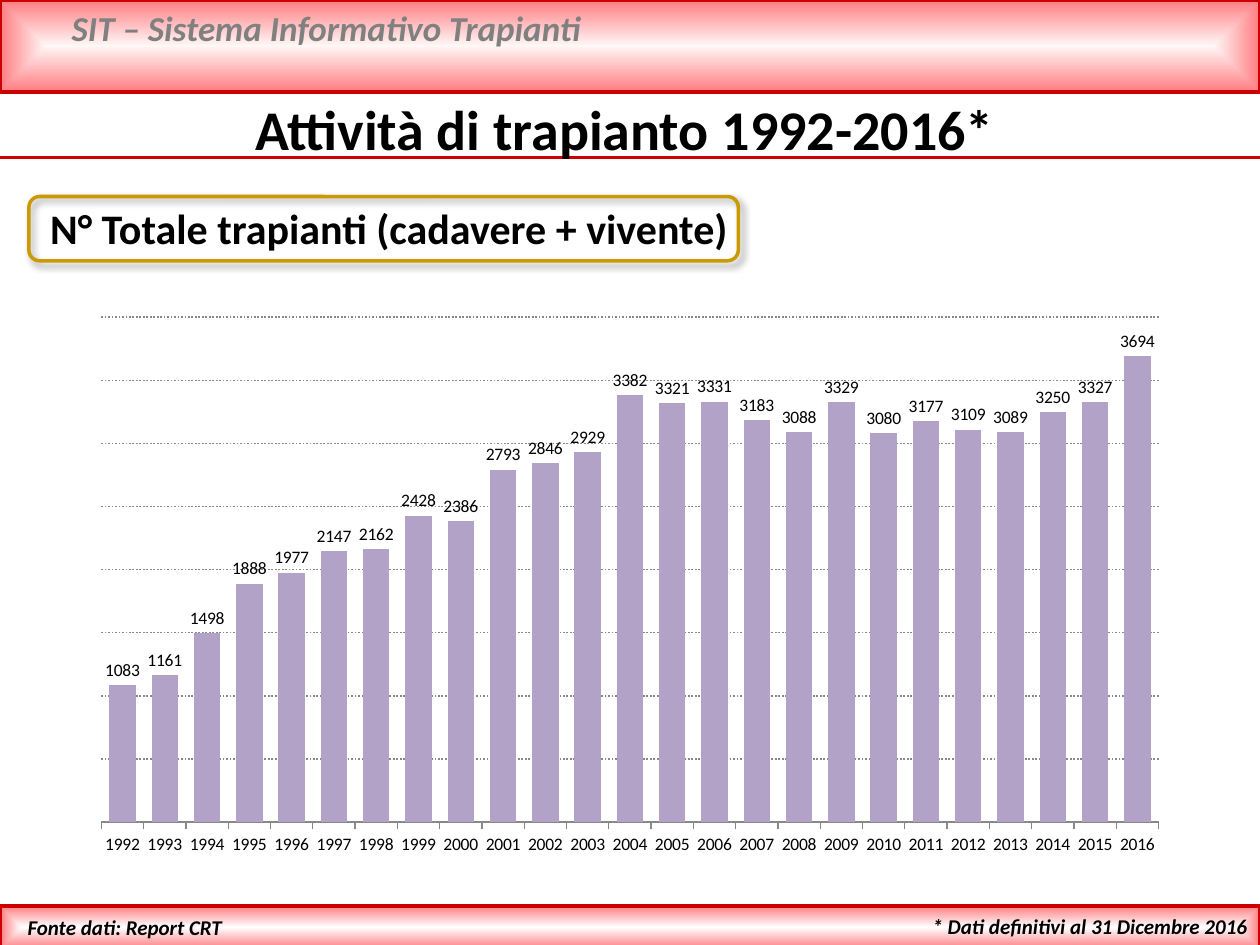
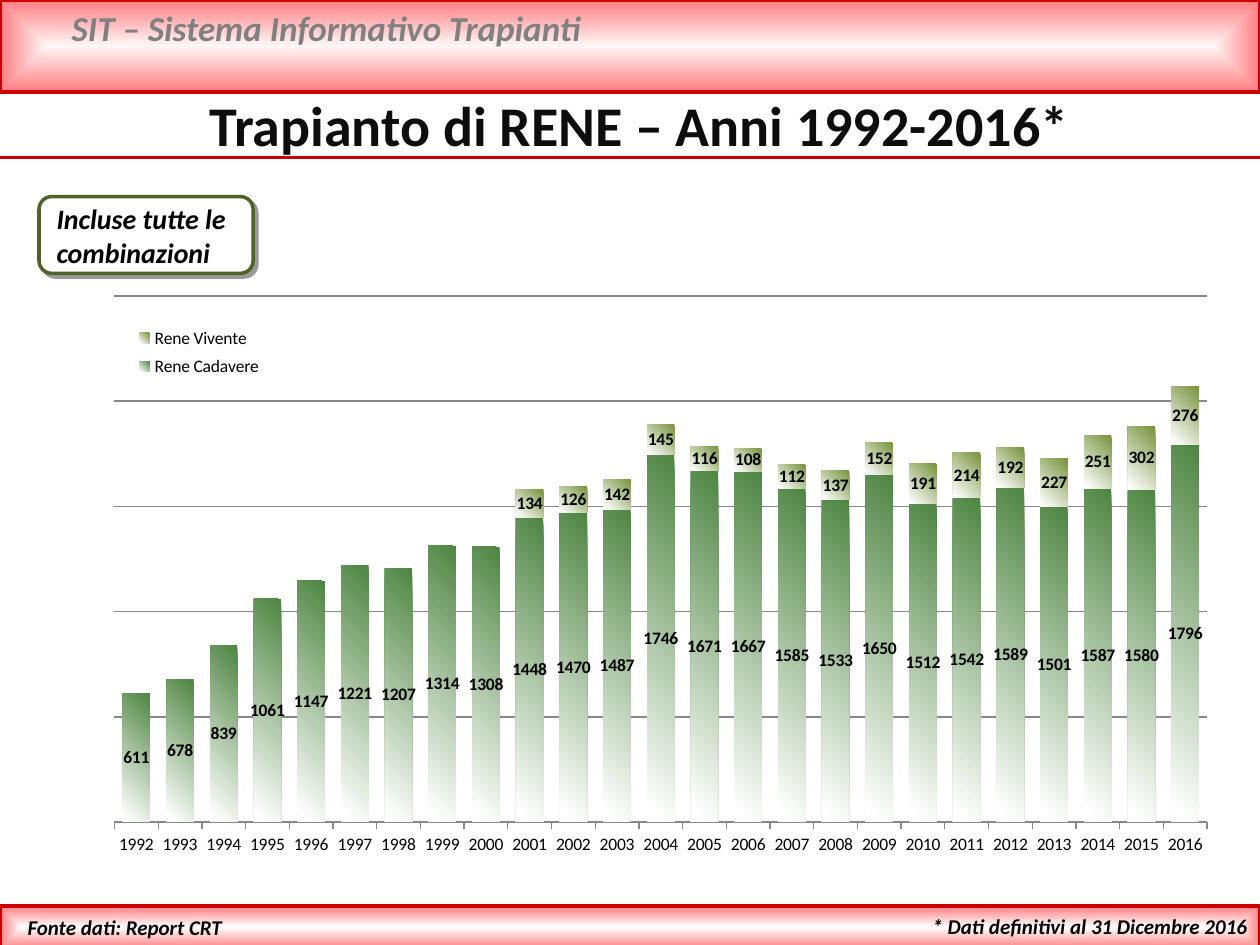
from pptx import Presentation
from pptx.chart.data import CategoryChartData
from pptx.dml.color import RGBColor
from pptx.enum.chart import (XL_CHART_TYPE, XL_LABEL_POSITION, XL_LEGEND_POSITION,
                             XL_TICK_LABEL_POSITION, XL_TICK_MARK)
from pptx.enum.dml import MSO_LINE
from pptx.enum.shapes import MSO_CONNECTOR, MSO_SHAPE
from pptx.enum.text import PP_ALIGN
from pptx.oxml import parse_xml
from pptx.oxml.ns import nsdecls, qn
from pptx.util import Inches, Pt

LEFT, CENTER, RIGHT = PP_ALIGN.LEFT, PP_ALIGN.CENTER, PP_ALIGN.RIGHT
CLUSTERED, STACKED = XL_CHART_TYPE.COLUMN_CLUSTERED, XL_CHART_TYPE.COLUMN_STACKED
LABEL_OUTSIDE, LABEL_CENTER = XL_LABEL_POSITION.OUTSIDE_END, XL_LABEL_POSITION.CENTER
DOTTED, SOLID = MSO_LINE.ROUND_DOT, MSO_LINE.SOLID

THEME = {
    "font": "Calibri",
    "red": RGBColor.from_string("CC0000"),
    "band edge": RGBColor.from_string("FF7C80"),
    "header middle": RGBColor.from_string("FFF6F6"),
    "white": RGBColor.from_string("FFFFFF"),
    "black": RGBColor.from_string("000000"),
    "near black": RGBColor.from_string("0D0D0D"),
    "gray": RGBColor.from_string("808080"),
    "grid": RGBColor.from_string("888888"),
    "gold": RGBColor.from_string("CC9900"),
    "olive": RGBColor.from_string("4F6228"),
    "lilac": RGBColor.from_string("B3A2C7"),
    "green": RGBColor.from_string("4E8542"),
    "light green": RGBColor.from_string("77933C"),
    "title size": 32, "heading size": 24, "header size": 20,
    "note size": 16, "footer size": 12, "chart size": 10, "line width": 2,
}


def add_text(slide, text, box, size, color=THEME["black"], align=LEFT, bold=True, italic=False):
    text_frame = slide.shapes.add_textbox(*map(Inches, box)).text_frame
    text_frame.word_wrap = True
    paragraph = text_frame.paragraphs[0]
    paragraph.text = text
    paragraph.alignment = align
    font = paragraph.runs[0].font
    font.name, font.size, font.color.rgb = THEME["font"], Pt(size), color
    font.bold, font.italic = bold, italic


def set_gradient(fill, start, end, end_position=1.0):
    fill.gradient()
    fill.gradient_angle = 225
    first_stop, last_stop = fill.gradient_stops
    first_stop.color.rgb, first_stop.position = start, 0
    last_stop.color.rgb, last_stop.position = end, end_position


# Figures for each slide
YEARS = [str(year) for year in range(1992, 2017)]
TOTALS = [1083, 1161, 1498, 1888, 1977, 2147, 2162, 2428, 2386, 2793, 2846, 2929, 3382,
          3321, 3331, 3183, 3088, 3329, 3080, 3177, 3109, 3089, 3250, 3327, 3694]
DECEASED = [611, 678, 839, 1061, 1147, 1221, 1207, 1314, 1308, 1448, 1470, 1487, 1746,
            1671, 1667, 1585, 1533, 1650, 1512, 1542, 1589, 1501, 1587, 1580, 1796]
LIVING = [None] * 9 + [134, 126, 142, 145, 116, 108, 112, 137, 152, 191, 214, 192, 227,
                       251, 302, 276]

SLIDES = [
    {
        "title": "Attività di trapianto 1992-2016*",
        "title box": (0, 0.7, 9.92, 0.64), "title color": THEME["black"],
        "badge": (0.23, 1.56, 5.63, 0.51), "badge fill": None,
        "badge line": THEME["gold"], "shadow blur": 4,
        "note": "N° Totale trapianti (cadavere + vivente)",
        "note box": (0.3, 1.56, 5.69, 0.5), "note size": THEME["heading size"],
        "note italic": False,
        "chart type": CLUSTERED, "chart box": (0.63, 2.43, 8.74, 4.45),
        "plot": (0.02, 0.02, 0.96, 0.9), "overlap": -20, "maximum": 4000,
        "grid dash": DOTTED, "labels": LABEL_OUTSIDE, "labels bold": False,
        "series": [("Series 1", TOTALS, THEME["lilac"])], "legend": None,
    },
    {
        "title": "Trapianto di RENE – Anni 1992-2016*",
        "title box": (1.09, 0.67, 7.97, 0.64), "title color": THEME["near black"],
        "badge": (0.31, 1.56, 1.7, 0.61), "badge fill": THEME["white"],
        "badge line": THEME["olive"], "shadow blur": 0,
        "note": "Incluse tutte le combinazioni",
        "note box": (0.35, 1.55, 1.65, 0.64), "note size": THEME["note size"],
        "note italic": True,
        "chart type": STACKED, "chart box": (0.73, 2.21, 8.94, 4.69),
        "plot": (0.02, 0.03, 0.97, 0.89), "overlap": 100, "maximum": 2500,
        "grid dash": SOLID, "labels": LABEL_CENTER, "labels bold": True,
        "series": [("Rene Cadavere", DECEASED, THEME["green"]),
                   ("Rene Vivente", LIVING, THEME["light green"])],
        "legend": (0.03, 0.07, 0.13, 0.11),
    },
]

presentation = Presentation()
presentation.slide_width, presentation.slide_height = Inches(10), Inches(7.5)

for content in SLIDES:
    slide = presentation.slides.add_slide(presentation.slide_layouts[6])

    # Header and footer bands, lit from the middle
    for top, height, middle in ((0, 0.73, THEME["header middle"]), (7.19, 0.34, THEME["white"])):
        band = slide.shapes.add_shape(MSO_SHAPE.RECTANGLE, 0, Inches(top), Inches(10), Inches(height))
        band.shadow.inherit = False
        band.line.color.rgb, band.line.width = THEME["red"], Pt(THEME["line width"])
        set_gradient(band.fill, middle, THEME["band edge"])
        gradient = band._element.spPr.find(qn("a:gradFill"))
        gradient.replace(gradient.find(qn("a:lin")), parse_xml(
            f'<a:path {nsdecls("a")} path="shape">'
            '<a:fillToRect l="50000" t="50000" r="50000" b="50000"/></a:path>'))

    # Rule under the title
    rule = slide.shapes.add_connector(MSO_CONNECTOR.STRAIGHT, 0, Inches(1.25), Inches(10), Inches(1.25))
    rule.line.color.rgb, rule.line.width = THEME["red"], Pt(THEME["line width"])
    rule._element.spPr.append(parse_xml(f'<a:effectLst {nsdecls("a")}/>'))

    # Header, footers and title
    add_text(slide, "SIT – Sistema Informativo Trapianti", (0.47, 0, 8.98, 0.44),
             THEME["header size"], color=THEME["gray"], italic=True)
    add_text(slide, "* Dati definitivi al 31 Dicembre 2016", (5.87, 7.2, 4.13, 0.3),
             THEME["footer size"], align=RIGHT, italic=True)
    add_text(slide, "Fonte dati: Report CRT", (0.12, 7.21, 3.21, 0.3),
             THEME["footer size"], italic=True)
    add_text(slide, content["title"], content["title box"], THEME["title size"],
             color=content["title color"], align=CENTER)

    # Badge with its note
    badge = slide.shapes.add_shape(MSO_SHAPE.ROUNDED_RECTANGLE, *map(Inches, content["badge"]))
    badge.line.color.rgb, badge.line.width = content["badge line"], Pt(THEME["line width"])
    if content["badge fill"] is None:
        badge.fill.background()
    else:
        badge.fill.solid()
        badge.fill.fore_color.rgb = content["badge fill"]
    badge.shadow.inherit = False
    badge._element.spPr.find(qn("a:effectLst")).append(parse_xml(
        f'<a:outerShdw {nsdecls("a")} blurRad="{Pt(content["shadow blur"])}" dist="{Pt(3)}" '
        'dir="2700000" algn="tl" rotWithShape="0"><a:srgbClr val="000000">'
        '<a:alpha val="40000"/></a:srgbClr></a:outerShdw>'))
    add_text(slide, content["note"], content["note box"], content["note size"],
             italic=content["note italic"])

    # Column chart
    chart_data = CategoryChartData()
    chart_data.categories = YEARS
    for name, values, color in content["series"]:
        chart_data.add_series(name, values)
    chart = slide.shapes.add_chart(content["chart type"], *map(Inches, content["chart box"]),
                                   chart_data).chart
    chart.has_title = False
    chart.font.name, chart.font.size = THEME["font"], Pt(THEME["chart size"])
    chart.font.color.rgb = THEME["black"]

    plot = chart.plots[0]
    plot.vary_by_categories = False
    plot.gap_width, plot.overlap = 60, content["overlap"]
    plot.has_data_labels = True
    labels = plot.data_labels
    labels.show_value, labels.position = True, content["labels"]
    labels.font.name, labels.font.size = THEME["font"], Pt(THEME["chart size"])
    labels.font.bold, labels.font.color.rgb = content["labels bold"], THEME["black"]

    for series, (name, values, color) in zip(plot.series, content["series"]):
        series.invert_if_negative = False
        if content["chart type"] == STACKED:
            set_gradient(series.format.fill, color, THEME["white"], end_position=0.96)
        else:
            series.format.fill.solid()
            series.format.fill.fore_color.rgb = color

    # Axes and grid
    value_axis, category_axis = chart.value_axis, chart.category_axis
    value_axis.minimum_scale, value_axis.maximum_scale = 0, content["maximum"]
    value_axis.major_unit = 500
    value_axis.visible = False
    value_axis.has_major_gridlines = True
    grid_line = value_axis.major_gridlines.format.line
    grid_line.color.rgb, grid_line.width = THEME["grid"], Pt(1)
    grid_line.dash_style = content["grid dash"]
    category_axis.major_tick_mark = XL_TICK_MARK.OUTSIDE
    category_axis.tick_label_position = XL_TICK_LABEL_POSITION.LOW
    category_axis.format.line.color.rgb = THEME["grid"]

    # Legend, and fixed places for plot and legend
    placed = [(chart._chartSpace.chart.plotArea, content["plot"], 0, '<c:layoutTarget val="inner"/>')]
    chart.has_legend = content["legend"] is not None
    if chart.has_legend:
        chart.legend.position = XL_LEGEND_POSITION.LEFT
        chart.legend.include_in_layout = True
        placed.append((chart.legend._element, content["legend"], 1, ""))
    for element, box, index, target in placed:
        for old_layout in element.findall(qn("c:layout")):
            element.remove(old_layout)
        modes = '<c:xMode val="edge"/><c:yMode val="edge"/>'
        sizes = "".join(f'<c:{key} val="{value}"/>' for key, value in zip("xywh", box))
        element.insert(index, parse_xml(
            f'<c:layout {nsdecls("c")}><c:manualLayout>{target}{modes}{sizes}'
            '</c:manualLayout></c:layout>'))

presentation.save("out.pptx")
